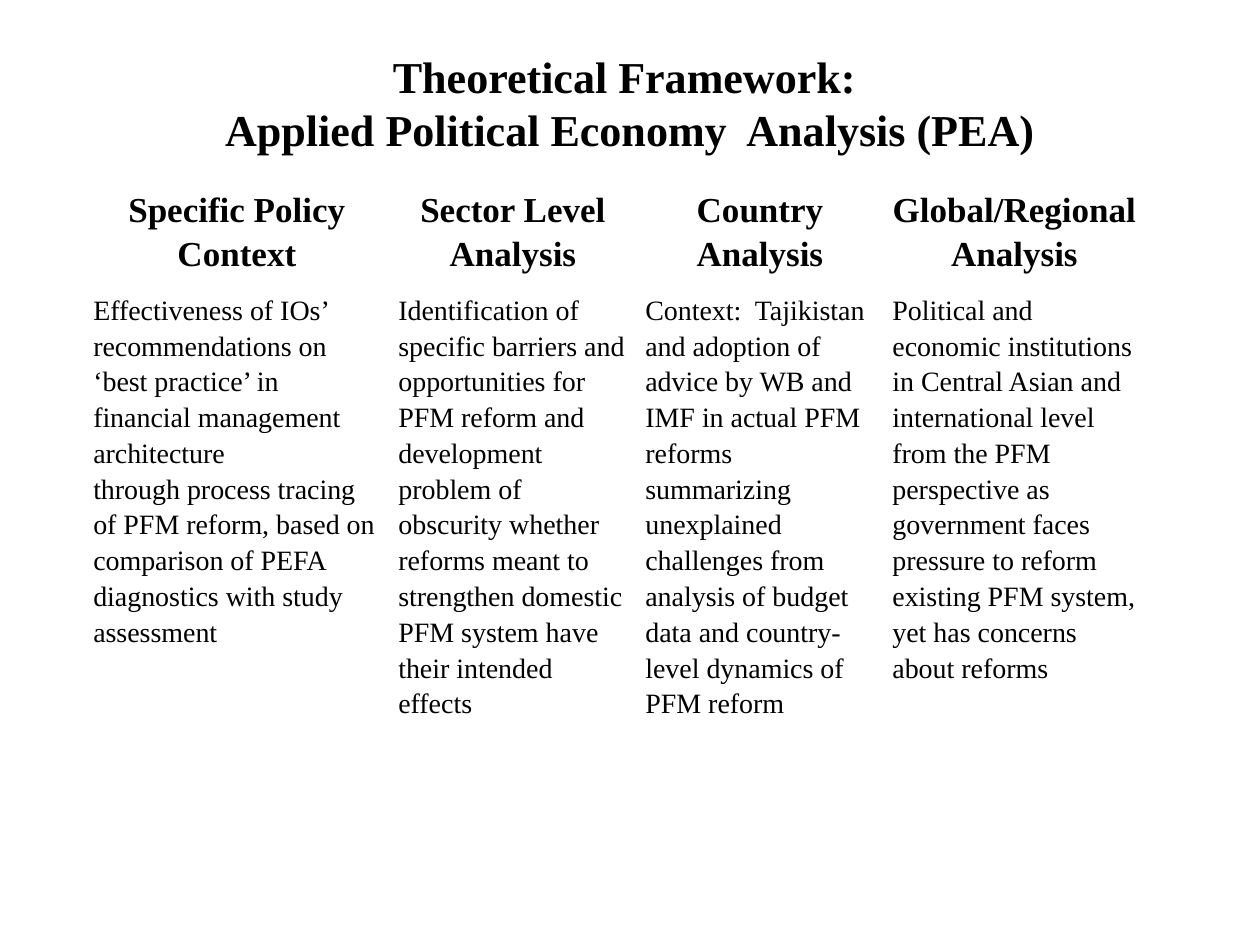
import pptx
import pptx.dml.color
import pptx.enum.text
import pptx.util

Cm = pptx.util.Cm
Pt = pptx.util.Pt
Align = pptx.enum.text.PP_ALIGN
Anchor = pptx.enum.text.MSO_ANCHOR

COLOURS = {"text": "000000", "page": "FFFFFF"}
FONT = "Times New Roman"
TITLE_LINES = ["Theoretical Framework: ", "Applied Political Economy  Analysis (PEA)"]
COLUMN_WIDTHS = [6.15, 4.98, 4.98, 5.28]
ROW_HEIGHTS = [2.13, 11.46]

# Each level of analysis: heading, then the paragraphs below it
LEVELS = [
    ("Specific Policy Context", [
        "Effectiveness of IOs’ recommendations on ‘best practice’ in financial "
        "management architecture",
        "through process tracing of PFM reform, based on comparison of PEFA "
        "diagnostics with study assessment"]),
    ("Sector Level Analysis", [
        "Identification of specific barriers and opportunities for PFM reform and "
        "development problem of obscurity whether reforms meant to strengthen "
        "domestic PFM system have their intended effects"]),
    ("Country Analysis", [
        "Context:  Tajikistan and adoption of advice by WB and IMF in actual PFM "
        "reforms summarizing unexplained challenges from analysis of budget data "
        "and country-level dynamics of PFM reform"]),
    ("Global/Regional Analysis", [
        "Political and economic institutions in Central Asian and international "
        "level from the PFM perspective as",
        "government faces pressure to reform existing PFM system, yet has concerns "
        "about reforms"]),
]


def rgb(name):
    return pptx.dml.color.RGBColor.from_string(COLOURS[name])


def add_span(para, text, size, bold):
    span = para.add_run()
    span.text = text
    span.font.name = FONT
    span.font.size = Pt(size)
    span.font.bold = bold
    span.font.color.rgb = rgb("text")


def fill_title(page):
    title = page.shapes.title
    title.left, title.top = Cm(1.27), Cm(0.76)
    title.width, title.height = Cm(22.86), Cm(3.18)
    frame = title.text_frame
    frame.word_wrap = True
    frame.auto_size = pptx.enum.text.MSO_AUTO_SIZE.NONE
    frame.vertical_anchor = Anchor.MIDDLE
    frame.margin_bottom = Cm(0.7)
    para = frame.paragraphs[0]
    para.alignment = Align.CENTER
    for index, line in enumerate(TITLE_LINES):
        if index:
            para.add_line_break()
        add_span(para, line, 25.2, True)


def fill_cell(cell, texts, size, bold, alignment):
    cell.fill.solid()
    cell.fill.fore_color.rgb = rgb("page")
    cell.vertical_anchor = Anchor.TOP
    cell.margin_left = cell.margin_right = Cm(0.18)
    cell.margin_top = cell.margin_bottom = Cm(0)
    frame = cell.text_frame
    for index, text in enumerate(texts):
        para = frame.add_paragraph() if index else frame.paragraphs[0]
        para.alignment = alignment
        para.line_spacing = 1.15
        add_span(para, text, size, bold)


def add_framework_table(page):
    table = page.shapes.add_table(
        len(ROW_HEIGHTS), len(LEVELS), Cm(1.7), Cm(3.73),
        Cm(sum(COLUMN_WIDTHS)), Cm(sum(ROW_HEIGHTS))).table
    for row, height in zip(table.rows, ROW_HEIGHTS):
        row.height = Cm(height)
    for index, (heading, texts) in enumerate(LEVELS):
        table.columns[index].width = Cm(COLUMN_WIDTHS[index])
        fill_cell(table.cell(0, index), [heading], 20, True, Align.CENTER)
        fill_cell(table.cell(1, index), texts, 16, False, Align.LEFT)


def main():
    deck = pptx.Presentation()
    deck.slide_width, deck.slide_height = Cm(25.4), Cm(19.05)
    page = deck.slides.add_slide(deck.slide_layouts.get_by_name("Title Only"))
    fill_title(page)
    add_framework_table(page)
    deck.save("out.pptx")


if __name__ == "__main__":
    main()
